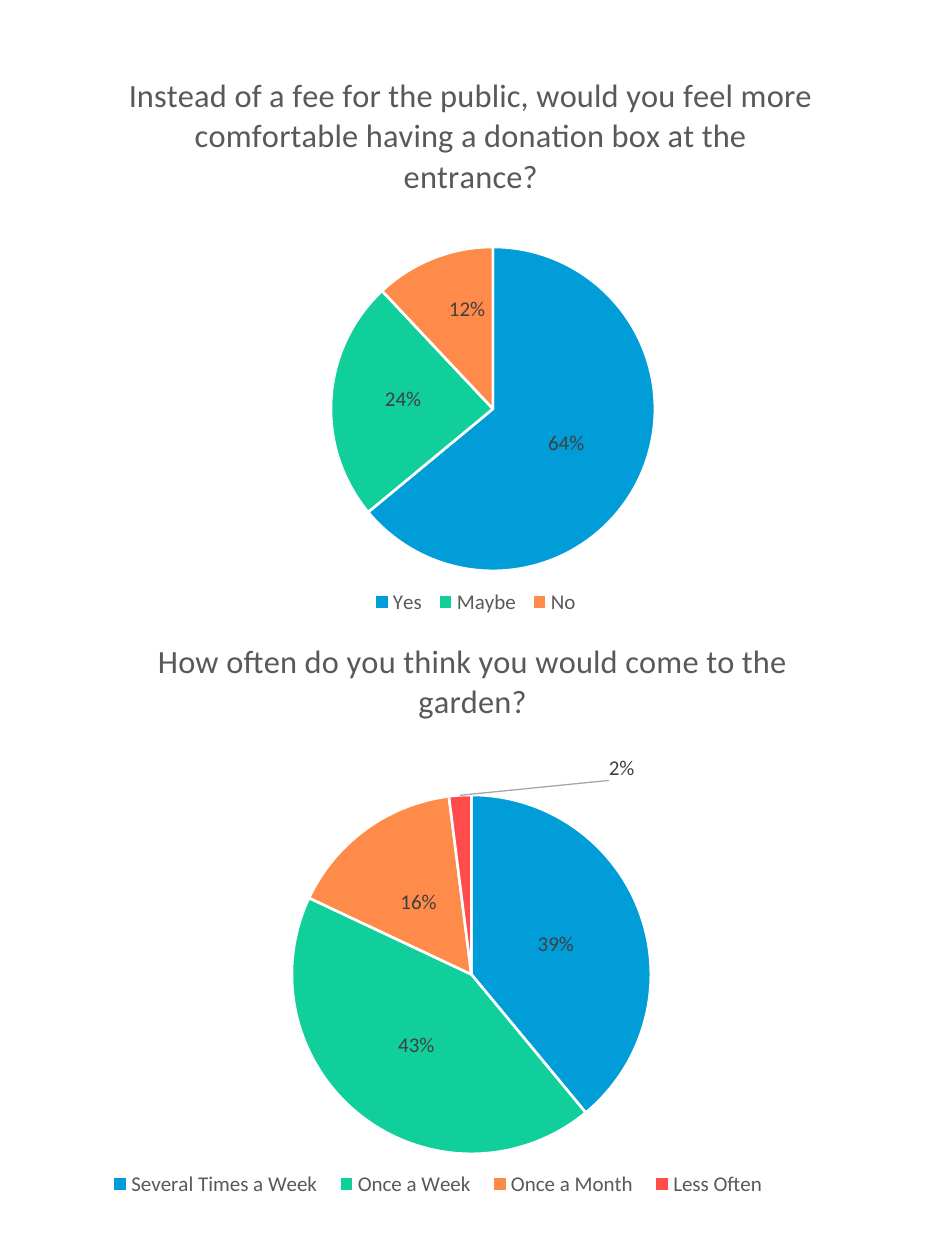
from lxml import etree
from pptx import Presentation
from pptx.chart.data import CategoryChartData
from pptx.dml.color import RGBColor
from pptx.enum.chart import XL_CHART_TYPE, XL_LABEL_POSITION, XL_LEGEND_POSITION
from pptx.oxml import parse_xml
from pptx.oxml.ns import nsdecls, qn
from pptx.util import Pt

PIE = XL_CHART_TYPE.PIE
CENTER = XL_LABEL_POSITION.CENTER
BOTTOM = XL_LEGEND_POSITION.BOTTOM

PX = 914400 / 126
COLORS = {
    "blue": "009DD9", "green": "10CF9B", "orange": "FF8B4B", "red": "FF4B4B",
    "white": "FFFFFF", "text": "595959", "label": "404040", "leader": "A6A6A6",
}
SLICE_COLORS = ["blue", "green", "orange", "red"]
CHART_LEFT, CHART_WIDTH, CHART_HEIGHT = 34, 873, 582

# Boxes and offsets are in px, measured from the chart's top left corner.
CHARTS = [
    {
        "title": "Instead of a fee for the public, would you feel more "
                 "comfortable having a donation box at the entrance?",
        "top": 50,
        "answers": {"Yes": 64, "Maybe": 24, "No": 12},
        "title_at": {"x": 89, "y": 16},
        "pie_box": {"x": 297, "y": 197, "w": 324, "h": 324},
        "legend_box": {"x": 331, "y": 532, "w": 221, "h": 40},
        "label_shifts": {1: {"x": -9, "y": -5}, 2: {"x": 4, "y": -24}},
    },
    {
        "title": "How often do you think you would come to the garden?",
        "top": 632,
        "answers": {"Several Times a Week": 39, "Once a Week": 43,
                    "Once a Month": 16, "Less Often": 2},
        "title_at": {"x": 118, "y": -2},
        "pie_box": {"x": 258, "y": 163, "w": 359, "h": 359},
        "legend_box": {"x": 64, "y": 532, "w": 680, "h": 40},
        "label_shifts": {3: {"x": 156, "y": -117}},
    },
]


def format_font(font, size, color):
    font.name = "Calibri"
    font.size = Pt(size)
    font.bold = False
    font.color.rgb = RGBColor.from_string(COLORS[color])


def set_layout(element, index, box, edge=True, inner=False):
    """Give a chart part a manual layout, as shares of the chart's size."""
    old_layout = element.find(qn("c:layout"))
    if old_layout is not None:
        element.remove(old_layout)
    layout = parse_xml(f"<c:layout {nsdecls('c')}><c:manualLayout/></c:layout>")
    settings = [("layoutTarget", "inner")] if inner else []
    if edge:
        settings += [("xMode", "edge"), ("yMode", "edge")]
    for key, length in box.items():
        full = CHART_WIDTH if key in "xw" else CHART_HEIGHT
        settings.append((key, str(round(length / full, 4))))
    for tag, value in settings:
        etree.SubElement(layout[0], qn(f"c:{tag}")).set("val", value)
    element.insert(index, layout)


presentation = Presentation()
presentation.slide_width = round(945 * PX)
presentation.slide_height = round(1260 * PX)
slide = presentation.slides.add_slide(presentation.slide_layouts[6])

for survey in CHARTS:
    chart_data = CategoryChartData()
    chart_data.categories = list(survey["answers"])
    chart_data.add_series("Series 1", list(survey["answers"].values()))
    frame = [round(length * PX) for length in
             (CHART_LEFT, survey["top"], CHART_WIDTH, CHART_HEIGHT)]
    chart = slide.shapes.add_chart(PIE, *frame, chart_data).chart
    chart.font.name = "Calibri"
    chart.font.size = Pt(10)

    chart.has_title = True
    title = chart.chart_title
    title.include_in_layout = False
    title.text_frame.text = survey["title"]
    format_font(title.text_frame.paragraphs[0].runs[0].font, 18.5, "text")
    set_layout(title._element, 1, survey["title_at"])

    chart.has_legend = True
    chart.legend.position = BOTTOM
    chart.legend.include_in_layout = False
    format_font(chart.legend.font, 12, "text")
    set_layout(chart.legend._element, 1, survey["legend_box"])

    plot = chart.plots[0]
    plot.vary_by_categories = True
    set_layout(plot._element.getparent(), 0, survey["pie_box"], inner=True)
    series = plot.series[0]
    for index in range(len(survey["answers"])):
        slice_format = series.points[index].format
        slice_format.fill.solid()
        slice_format.fill.fore_color.rgb = RGBColor.from_string(COLORS[SLICE_COLORS[index]])
        slice_format.line.color.rgb = RGBColor.from_string(COLORS["white"])
        slice_format.line.width = Pt(1.5)

    labels = series.data_labels
    labels.show_percentage = True
    labels.show_value = False
    labels.number_format = "0%"
    labels.number_format_is_linked = False
    labels.position = CENTER
    format_font(labels.font, 12, "label")
    for index, shift in survey["label_shifts"].items():
        label = series.points[index].data_label
        label.position = CENTER
        format_font(label.font, 12, "label")
        label_element = label._dLbl
        label_element.find(qn("c:showVal")).set("val", "0")
        label_element.find(qn("c:showPercent")).set("val", "1")
        set_layout(label_element, 1, shift, edge=False)

    leader_switch = labels._element.find(qn("c:showLeaderLines"))
    if leader_switch is None:
        leader_switch = etree.SubElement(labels._element, qn("c:showLeaderLines"))
    leader_switch.set("val", "1")
    leader_switch.addnext(parse_xml(
        f"<c:leaderLines {nsdecls('c', 'a')}><c:spPr><a:ln w='9525'><a:solidFill>"
        f"<a:srgbClr val='{COLORS['leader']}'/></a:solidFill></a:ln></c:spPr></c:leaderLines>"))

presentation.save("out.pptx")
